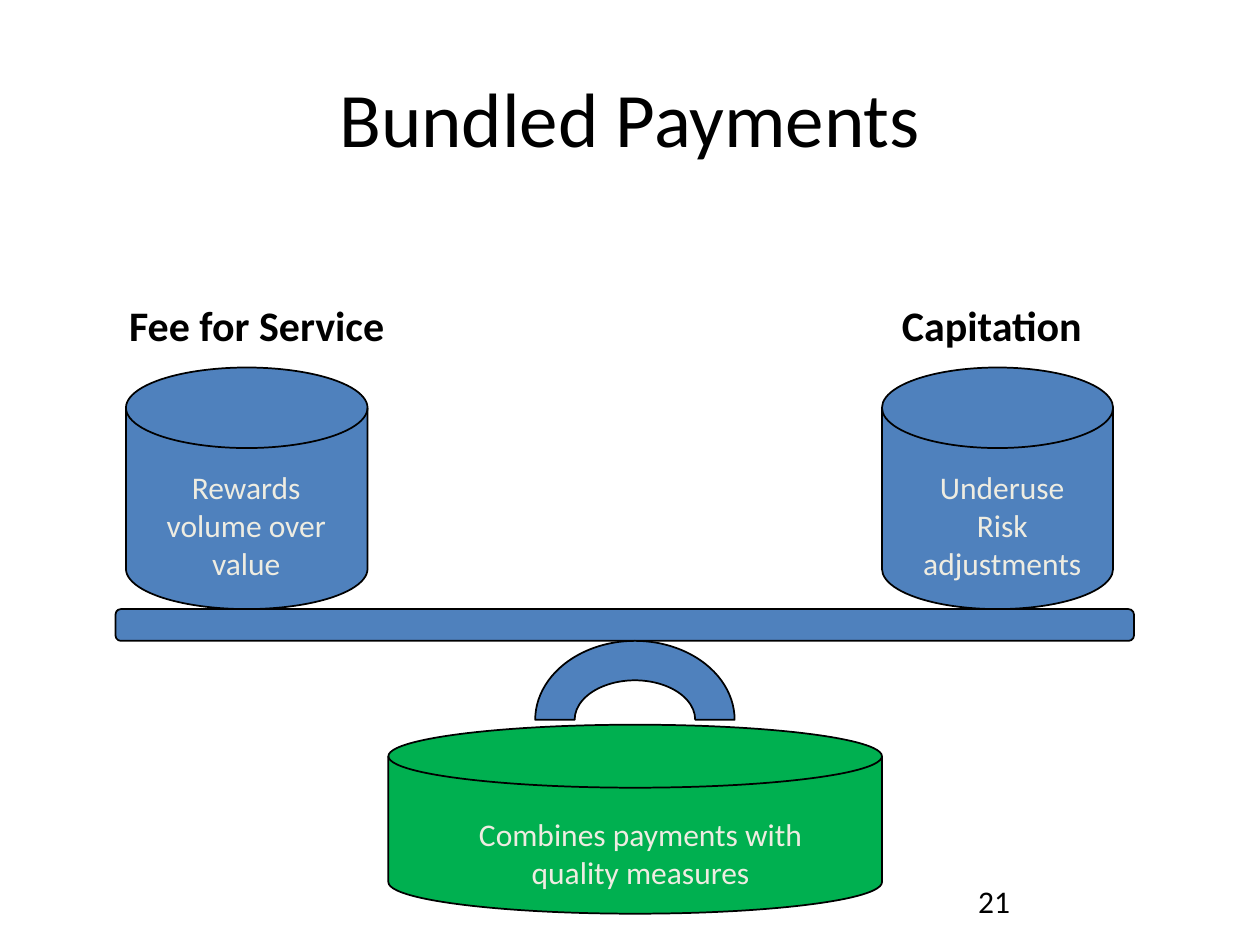
from pptx import Presentation
from pptx.dml.color import RGBColor
from pptx.enum import shapes, text
from pptx.util import Cm, Pt

BLACK = RGBColor(0x00, 0x00, 0x00)
BLUE = RGBColor(0x4F, 0x81, 0xBD)
GREEN = RGBColor(0x00, 0xB0, 0x50)
CREAM = RGBColor(0xEE, 0xEC, 0xE1)
FONT = "Calibri"
SHAPE = shapes.MSO_SHAPE
DISK = SHAPE.FLOWCHART_MAGNETIC_DISK


def add_text(s, x, y, w, h, lines, size=18, color=CREAM, bold=False,
             align=text.PP_ALIGN.CENTER, anchor=text.MSO_ANCHOR.TOP):
    tf = s.shapes.add_textbox(Cm(x), Cm(y), Cm(w), Cm(h)).text_frame
    tf.word_wrap = True
    tf.vertical_anchor = anchor
    tf.text = "\n".join(lines)
    for p in tf.paragraphs:
        p.alignment = align
        p.font.name = FONT
        p.font.size = Pt(size)
        p.font.bold = bold
        p.font.color.rgb = color
    return tf


def add_solid(s, kind, x, y, w, h, fill=BLUE):
    sp = s.shapes.add_shape(kind, Cm(x), Cm(y), Cm(w), Cm(h))
    sp.shadow.inherit = False
    sp.fill.solid()
    sp.fill.fore_color.rgb = fill
    sp.line.color.rgb = BLACK
    sp.line.width = Pt(1)


def add_weight(s, x, y, w, h, label, label_dx, lines):
    """Disk standing on the beam, with a heading above it."""
    add_solid(s, DISK, x, y, w, h)
    add_text(s, x + label_dx, y - 1.5, 6.55, 1.27, [label], 24, BLACK, True)
    add_text(s, x + 0.42, y + 1.9, 4.01, 2.7, lines)


def add_support(s, x, y, w, h):
    """Beam, arc under it and the base disk."""
    add_solid(s, SHAPE.ROUNDED_RECTANGLE, x, y, w, 0.64)
    add_solid(s, SHAPE.BLOCK_ARC, x + 8.46, y + 0.64, 4.02, 3.18)
    base_h = 3.81
    base_x, base_y = x + 5.5, y + h - base_h
    add_solid(s, DISK, base_x, base_y, 9.95, base_h, GREEN)
    add_text(s, base_x + 0.64, base_y + 1.7, 8.89, 1.8,
             ["Combines payments with quality measures"])


def add_page_number(s, x, y, w, h):
    tf = add_text(s, x, y, w, h, ["21"], color=BLACK,
                  align=text.PP_ALIGN.LEFT, anchor=text.MSO_ANCHOR.MIDDLE)
    tf.margin_left = Cm(1.52)


def main():
    prs = Presentation()
    prs.slide_width, prs.slide_height = Cm(25.4), Cm(19.05)
    s = prs.slides.add_slide(prs.slide_layouts[6])

    # Title
    add_text(s, 1.27, 0.76, 22.86, 3.18, ["Bundled Payments"], 44, BLACK,
             anchor=text.MSO_ANCHOR.MIDDLE)
    # Balance
    add_weight(s, 2.54, 7.41, 4.87, 4.87, "Fee for Service", -0.64,
               ["Rewards volume over value"])
    add_weight(s, 17.78, 7.41, 4.66, 4.87, "Capitation", -1.06,
               ["Underuse", "Risk adjustments"])
    add_support(s, 2.33, 12.28, 20.53, 6.14)
    # Page number
    add_page_number(s, 18.2, 17.65, 5.93, 1.02)

    prs.save("out.pptx")


if __name__ == "__main__":
    main()
